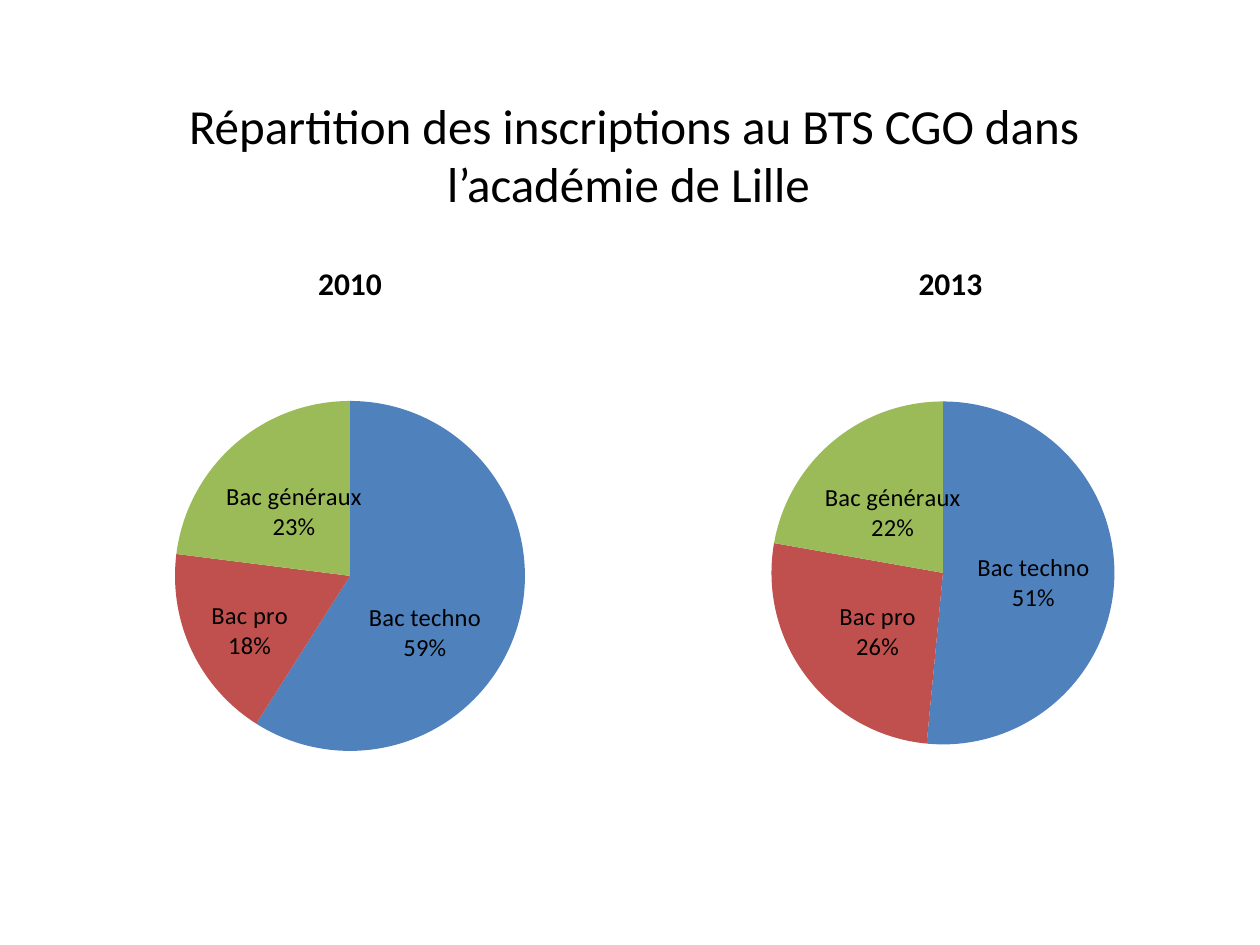
from copy import deepcopy

from lxml import etree
from pptx import Presentation
from pptx.chart.data import CategoryChartData
from pptx.dml.color import RGBColor
from pptx.enum.chart import XL_CHART_TYPE as ChartType, XL_LABEL_POSITION as LabelPos
from pptx.enum.text import MSO_AUTO_SIZE as AutoSize, PP_ALIGN as Align
from pptx.oxml.ns import qn
from pptx.util import Emu, Pt

PX = 914400 // 126
FONT = "Calibri"
COLORS = {
    "text": "000000",
    "Bac techno": "4F81BD",
    "Bac pro": "C0504D",
    "Bac généraux": "9BBB59",
}

# Content; boxes are left, top, width, height in px, label shifts are px from the slice centre
TITLE = "Répartition des inscriptions au BTS CGO dans l’académie de Lille "
TITLE_BOX = (168, 89, 932, 130)
CATEGORIES = ["Bac techno", "Bac pro", "Bac généraux"]
PIES = [
    {"year": "2010", "values": (59, 18, 23), "box": (54, 238, 592, 552),
     "center": (350, 576), "diameter": 350, "shifts": [(-9, 33), (-21, 18), (2, 2)]},
    {"year": "2013", "values": (51, 26, 22), "box": (679, 238, 543, 552),
     "center": (943, 573), "diameter": 343, "shifts": [(5, 6), (3, 7), (5, 6)]},
]


def emu(box):
    return [Emu(v * PX) for v in box]


def style(font, size, bold=False):
    font.name, font.size, font.bold = FONT, Pt(size), bold
    font.color.rgb = RGBColor.from_string(COLORS["text"])


def manual_layout(settings):
    layout = etree.Element(qn("c:layout"))
    manual = etree.SubElement(layout, qn("c:manualLayout"))
    for tag, value in settings.items():
        etree.SubElement(manual, qn(f"c:{tag}")).set("val", str(value))
    return layout


def place_plot(chart, pie):
    """Fix the pie inside its chart, as fractions of the chart box."""
    left, top, width, height = pie["box"]
    (cx, cy), d = pie["center"], pie["diameter"]
    plot_area = chart.plots[0]._element.getparent()
    for old in plot_area.findall(qn("c:layout")):
        plot_area.remove(old)
    plot_area.insert(0, manual_layout({
        "layoutTarget": "inner", "xMode": "edge", "yMode": "edge",
        "x": round((cx - d / 2 - left) / width, 4),
        "y": round((cy - d / 2 - top) / height, 4),
        "w": round(d / width, 4), "h": round(d / height, 4)}))


def place_labels(labels, pie):
    """Give each slice its own label, shifted and otherwise like the series labels."""
    group = labels._element
    shared = [el for el in group if el.tag != qn("c:showLeaderLines")]
    width, height = pie["box"][2:]
    for i, (dx, dy) in enumerate(pie["shifts"]):
        label = etree.Element(qn("c:dLbl"))
        etree.SubElement(label, qn("c:idx")).set("val", str(i))
        label.append(manual_layout({"x": round(dx / width, 4), "y": round(dy / height, 4)}))
        label.extend(deepcopy(el) for el in shared)
        group.insert(i, label)


def add_pie(slide, pie):
    data = CategoryChartData()
    data.categories = CATEGORIES
    data.add_series(pie["year"], pie["values"])
    chart = slide.shapes.add_chart(ChartType.PIE, *emu(pie["box"]), data).chart
    style(chart.font, 10)
    chart.has_legend = False
    chart.has_title = True
    p = chart.chart_title.text_frame.paragraphs[0]
    p.text = pie["year"]
    style(p.font, 18, bold=True)
    chart.chart_title.include_in_layout = False

    # Slices
    plot = chart.plots[0]
    plot.vary_by_categories = True
    series = plot.series[0]
    for i, category in enumerate(CATEGORIES):
        fmt = series.points[i].format
        fmt.fill.solid()
        fmt.fill.fore_color.rgb = RGBColor.from_string(COLORS[category])
        fmt.line.fill.background()

    # Labels: the values are rounded percentages
    labels = series.data_labels
    labels.show_category_name = True
    labels.show_value = True
    labels.show_percentage = False
    labels.number_format = '0"%"'
    labels.number_format_is_linked = False
    labels.position = LabelPos.CENTER
    style(labels.font, 14)
    labels._element.find(qn("c:txPr")).find(qn("a:bodyPr")).set("wrap", "square")
    separator = etree.Element(qn("c:separator"))
    separator.text = "\n"
    labels._element.find(qn("c:showBubbleSize")).addnext(separator)
    place_labels(labels, pie)
    place_plot(chart, pie)


def add_title(slide):
    tf = slide.shapes.add_textbox(*emu(TITLE_BOX)).text_frame
    tf.word_wrap = True
    tf.auto_size = AutoSize.SHAPE_TO_FIT_TEXT
    p = tf.paragraphs[0]
    p.text = TITLE
    p.alignment = Align.CENTER
    style(p.font, 28)


def main():
    prs = Presentation()
    prs.slide_width, prs.slide_height = Emu(1260 * PX), Emu(945 * PX)
    slide = prs.slides.add_slide(prs.slide_layouts[6])
    for pie in PIES:
        add_pie(slide, pie)
    add_title(slide)
    prs.save("out.pptx")


if __name__ == "__main__":
    main()
